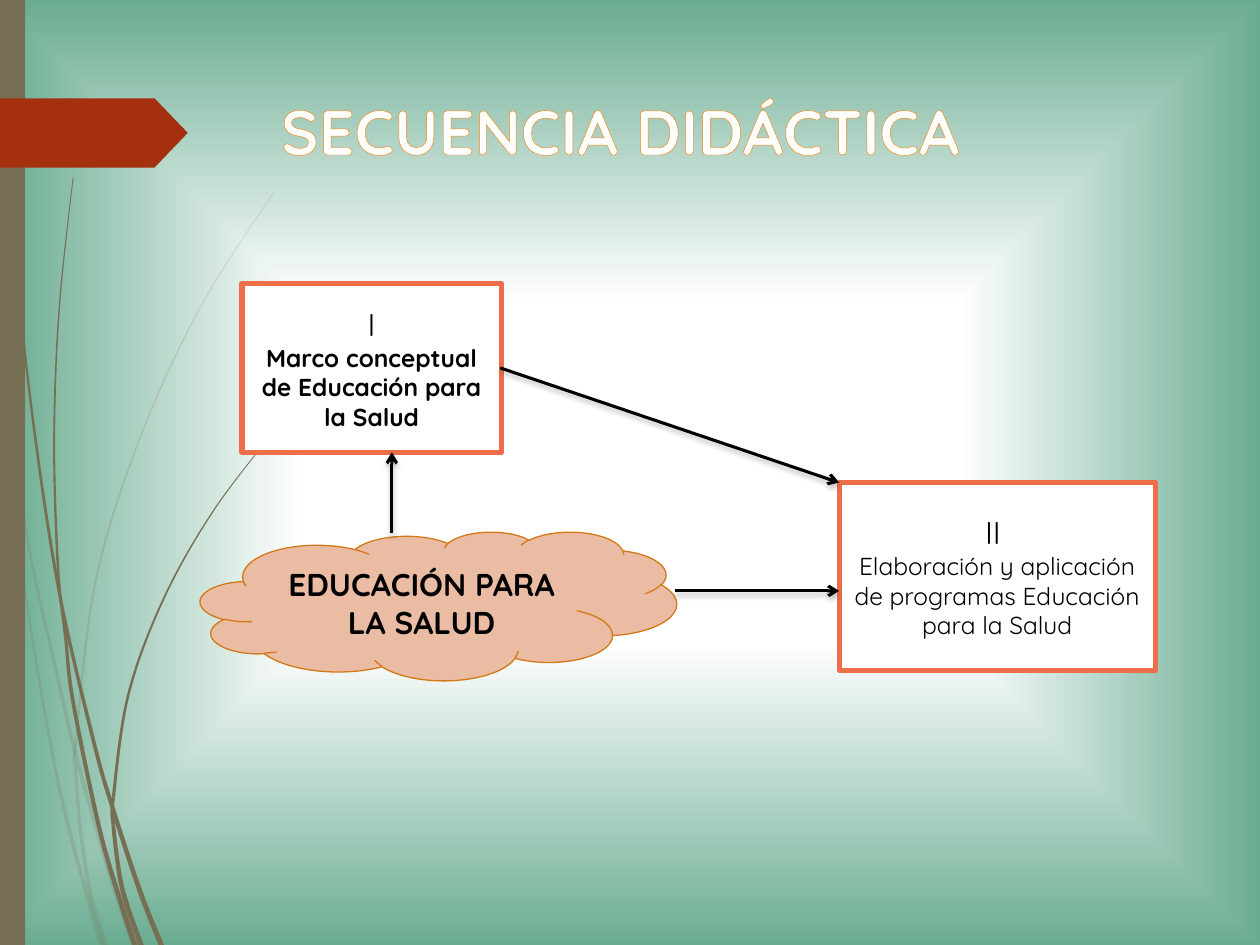
from typing import NamedTuple

from lxml.etree import SubElement
from pptx import Presentation
from pptx.dml.color import RGBColor
from pptx.enum.shapes import MSO_CONNECTOR, MSO_SHAPE
from pptx.enum.text import MSO_ANCHOR, PP_ALIGN
from pptx.oxml import parse_xml
from pptx.oxml.ns import nsdecls, qn
from pptx.util import Inches, Pt

FONT = "Quicksand"
BROWN = "766F54"
ORANGE = "EE6E4B"


class Span(NamedTuple):
    text: str
    size: float
    bold: bool = False


class Node(NamedTuple):
    kind: MSO_SHAPE
    area: tuple
    fill: str
    line: str
    line_width: float
    spans: list


class Arrow(NamedTuple):
    start: tuple
    end: tuple


class Strand(NamedTuple):
    """Grass blade: centre points from its tip down, the indexes of the points
    where one section ends and the next starts, and its width at the foot."""
    points: list
    joints: tuple
    width: float
    opacity: int = 100


STRANDS = [
    Strand([(0, 2.9), (0.09, 3.5), (0.25, 4.45), (0.42, 5.21), (0.6, 5.98),
            (0.87, 6.93), (1.06, 7.5)], (1, 4), 0.04, 20),
    Strand([(0.08, 3.5), (0.2, 4.7), (0.46, 6.2), (0.7, 7.14), (0.81, 7.5)],
           (3,), 0.04, 20),
    Strand([(2.17, 1.53), (1.59, 2.44), (1.11, 3.48), (0.76, 4.61), (0.6, 5.9),
            (0.6, 6.1), (0.64, 6.6), (0.72, 7.1), (0.84, 7.5)], (4, 5, 7), 0.03, 20),
    Strand([(0.03, 0), (0.06, 1.1), (0.15, 2.33), (0.29, 3.55), (0.48, 4.75),
            (0.75, 5.91), (0.9, 6.43), (1.11, 7.07), (1.28, 7.5)], (4, 6), 0.04),
    Strand([(0.58, 1.41), (0.47, 2.45), (0.43, 3.49), (0.46, 4.5), (0.52, 5.05),
            (0.58, 5.57), (0.79, 6.58), (0.97, 7.2), (1.07, 7.5)], (3, 4, 7), 0.04),
    Strand([(2.16, 3.44), (1.69, 4.06), (1.3, 4.75), (1.02, 5.51), (0.9, 6.33),
            (0.9, 6.55), (0.95, 6.95), (1.01, 7.19), (1.12, 7.5)], (4, 5, 7), 0.04),
]
NODES = [
    Node(MSO_SHAPE.CLOUD, (1.59, 4.22, 3.78, 1.18), "EBBCA4", "D47817", 0.75,
         [Span("EDUCACIÓN PARA LA SALUD", 18, True)]),
    Node(MSO_SHAPE.RECTANGLE, (1.92, 2.25, 2.06, 1.34), "FFFFFF", ORANGE, 3,
         [Span("I", 18), Span("Marco conceptual de Educación para la Salud", 14, True)]),
    Node(MSO_SHAPE.RECTANGLE, (6.66, 3.83, 2.51, 1.49), "FFFFFF", ORANGE, 3,
         [Span("II ", 18),
          Span("Elaboración y aplicación de programas Educación para la Salud", 14)]),
]
ARROWS = [
    Arrow((5.36, 4.69), (6.66, 4.69)),
    Arrow((3.11, 4.23), (3.11, 3.59)),
    Arrow((3.97, 2.92), (6.66, 3.83)),
]


def color(value: str) -> RGBColor:
    return RGBColor.from_string(value)


def paint(shape, fill: str, line: str = "", line_width: float = 0, opacity: int = 100) -> None:
    shape.shadow.inherit = False
    shape.fill.solid()
    shape.fill.fore_color.rgb = color(fill)
    if opacity < 100:
        tint = shape.fill._xPr.find(qn("a:solidFill"))[0]
        SubElement(tint, qn("a:alpha"), val=str(opacity * 1000))
    if line:
        shape.line.color.rgb = color(line)
        shape.line.width = Pt(line_width)
    else:
        shape.line.fill.background()


def write(para, text: str, *, size: float, bold: bool = False, ink: str = "000000",
          align: PP_ALIGN = PP_ALIGN.CENTER):
    para.alignment = align
    span = para.add_run()
    span.text = text
    span.font.name = FONT
    span.font.size = Pt(size)
    span.font.bold = bold
    span.font.color.rgb = color(ink)
    return span


def control_points(points: list) -> list:
    """Points of a smooth path with two Bezier handles between neighbours."""
    padded = [points[0], *points, points[-1]]
    path = [points[0]]
    for a, b, c, d in zip(padded, padded[1:], padded[2:], padded[3:]):
        path.append(tuple(q + (r - p) / 6 for p, q, r in zip(a, b, c)))
        path.append(tuple(r - (s - q) / 6 for q, r, s in zip(b, c, d)))
        path.append(c)
    return path


def bend(shape) -> None:
    """Turn each three line segments of a freeform into one Bezier curve."""
    segments = list(shape._element.iter(qn("a:lnTo")))
    for first, *others in zip(segments[::3], segments[1::3], segments[2::3]):
        first.tag = qn("a:cubicBezTo")
        for other in others:
            first.append(other[0])
            other.getparent().remove(other)


def add_strand(page, strand: Strand) -> None:
    path = control_points(strand.points)
    halves = [0.003 + strand.width / 2 * i / len(path) for i in range(len(path))]
    left, right = ([(Inches(x + side * half), Inches(y)) for (x, y), half in zip(path, halves)]
                   for side in (-1, 1))
    ends = [0, *strand.joints, len(strand.points) - 1]
    for start, stop in zip(ends, ends[1:]):
        section = slice(3 * start, 3 * stop + 1)
        near, far = left[section], right[section][::-1]
        # The foot is a straight edge, written as a curve with its handles on its ends.
        outline = near[1:] + [near[-1], far[0]] + far
        builder = page.shapes.build_freeform(*near[0])
        builder.add_line_segments(outline, close=True)
        blade = builder.convert_to_shape()
        bend(blade)
        paint(blade, BROWN, opacity=strand.opacity)


def add_shape(page, kind: MSO_SHAPE, area: tuple):
    return page.shapes.add_shape(kind, *map(Inches, area))


def add_node(page, node: Node) -> None:
    box = add_shape(page, node.kind, node.area)
    paint(box, node.fill, node.line, node.line_width)
    frame = box.text_frame
    frame.word_wrap = True
    frame.vertical_anchor = MSO_ANCHOR.MIDDLE
    for index, span in enumerate(node.spans):
        para = frame.add_paragraph() if index else frame.paragraphs[0]
        write(para, span.text, size=span.size, bold=span.bold)


def add_arrow(page, arrow: Arrow) -> None:
    line = page.shapes.add_connector(
        MSO_CONNECTOR.STRAIGHT, *map(Inches, arrow.start + arrow.end))
    line.line.color.rgb = color("000000")
    line.line.width = Pt(1.75)
    SubElement(line.line._get_or_add_ln(), qn("a:tailEnd"), type="arrow")
    line._element.spPr.append(parse_xml(
        f'<a:effectLst {nsdecls("a")}><a:outerShdw blurRad="{Pt(3)}" dist="{Pt(2)}" '
        'dir="5400000" rotWithShape="0"><a:srgbClr val="000000"><a:alpha val="25000"/>'
        '</a:srgbClr></a:outerShdw></a:effectLst>'))


def set_background(page) -> None:
    """White centre fading to green along a rectangular gradient."""
    page.background.fill.solid()
    properties = page._element.cSld.bg.bgPr
    stops = "".join(f'<a:gs pos="{pos * 1000}"><a:srgbClr val="{value}"/></a:gs>'
                    for pos, value in [(0, "FFFFFF"), (36, "FFFFFF"), (100, "6AAC91")])
    properties.replace(properties[0], parse_xml(
        f'<a:gradFill {nsdecls("a")} rotWithShape="1"><a:gsLst>{stops}</a:gsLst>'
        '<a:path path="rect"><a:fillToRect l="50000" t="50000" r="50000" b="50000"/>'
        '</a:path></a:gradFill>'))


def set_title(page, text: str) -> None:
    title = page.shapes.title
    title.left, title.top, title.width, title.height = map(Inches, (2.13, 0.68, 7.21, 0.78))
    title.text_frame.vertical_anchor = MSO_ANCHOR.TOP
    span = write(title.text_frame.paragraphs[0], text, size=36, bold=True,
                 ink="FFFFFF", align=PP_ALIGN.LEFT)
    span.font._element.insert(0, parse_xml(
        f'<a:ln {nsdecls("a")} w="{Pt(1.42)}"><a:solidFill><a:srgbClr val="F67F00"/>'
        '</a:solidFill></a:ln>'))


def main() -> None:
    deck = Presentation()
    deck.slide_width, deck.slide_height = Inches(10), Inches(7.5)
    page = deck.slides.add_slide(deck.slide_layouts[5])
    set_background(page)
    for strand in STRANDS:
        add_strand(page, strand)
    paint(add_shape(page, MSO_SHAPE.RECTANGLE, (0, 0, 0.2, 7.5)), BROWN)
    tag = add_shape(page, MSO_SHAPE.PENTAGON, (0, 0.78, 1.49, 0.55))
    tag.adjustments[0] = 0.48
    paint(tag, "A53010")
    set_title(page, "SECUENCIA DIDÁCTICA")
    for node in NODES:
        add_node(page, node)
    for arrow in ARROWS:
        add_arrow(page, arrow)
    deck.save("out.pptx")


if __name__ == "__main__":
    main()
